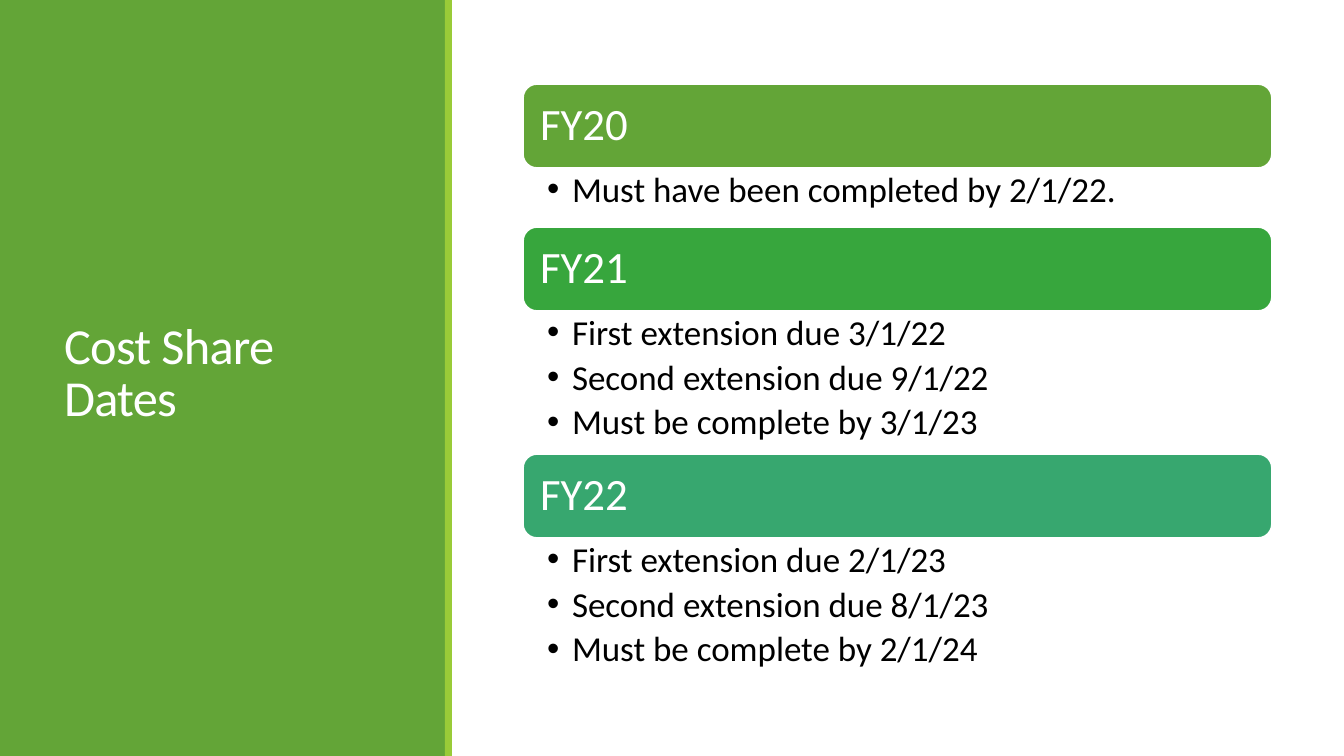
"""Build the Cost Share Dates slide."""
from lxml import etree
from pptx import Presentation, util as u
from pptx.dml import color
from pptx.enum import shapes, text
from pptx.oxml import ns

TITLE = "Cost Share Dates"
YEARS = [
    ("FY20", "green", ["Must have been completed by 2/1/22."]),
    ("FY21", "leaf", ["First extension due 3/1/22", "Second extension due 9/1/22",
                      "Must be complete by 3/1/23"]),
    ("FY22", "teal", ["First extension due 2/1/23", "Second extension due 8/1/23",
                      "Must be complete by 2/1/24"]),
]
COLORS = {"green": "63A537", "lime": "99CB38", "leaf": "37A63D",
          "teal": "37A76F", "white": "FFFFFF", "black": "000000"}
FONT = "Calibri"
PAGE_W, PAGE_H = 1344, 756
LEFT, TOP, WIDTH, BAR_H = 523, 84, 749, 84
LINE_H, LIST_PAD, INDENT = 42, 17, 25


def px(value):
    return u.Emu(round(value * 914400 / 100.8))


def rgb(name):
    return color.RGBColor.from_string(COLORS[name])


def place(box, *bounds):
    box.left, box.top, box.width, box.height = map(px, bounds)


def add_block(page, kind, bounds, fill):
    block = page.shapes.add_shape(kind, *map(px, bounds))
    block.shadow.inherit = False
    block.fill.solid()
    block.fill.fore_color.rgb = rgb(fill)
    block.line.fill.background()
    return block


def set_frame(box, insets, anchor):
    frame = box.text_frame
    frame.word_wrap = True
    frame.auto_size = text.MSO_AUTO_SIZE.NONE
    frame.vertical_anchor = anchor
    (frame.margin_left, frame.margin_top,
     frame.margin_right, frame.margin_bottom) = map(px, insets)
    return frame


def style(para, size, ink, spacing=0.9, after=0):
    para.alignment = text.PP_ALIGN.LEFT
    para.line_spacing = spacing
    para.space_before, para.space_after = u.Pt(0), u.Pt(after)
    for span in para.runs:
        span.font.name, span.font.size, span.font.bold = FONT, u.Pt(size), False
        span.font.color.rgb = rgb(ink)


def add_bullet(para):
    props = para._p.get_or_add_pPr()
    props.set("marL", str(px(INDENT)))
    props.set("indent", str(-px(INDENT)))
    etree.SubElement(props, ns.qn("a:buChar")).set("char", "•")


def add_title(page):
    title = page.shapes.title
    place(title, 54, 57, 340, 636)
    frame = set_frame(title, (10, 5, 10, 5), text.MSO_ANCHOR.MIDDLE)
    frame.text = TITLE
    style(frame.paragraphs[0], 36, "white", 0.85)
    for span in frame.paragraphs[0].runs:
        span.font._element.set("spc", "-50")
    for bounds, fill in [((0, 0, 446, PAGE_H), "green"), ((445, 0, 7, PAGE_H), "lime")]:
        panel = add_block(page, shapes.MSO_SHAPE.RECTANGLE, bounds, fill)
        title.element.addprevious(panel.element)


def add_year(page, body, top, year, fill, dates):
    bar = add_block(page, shapes.MSO_SHAPE.ROUNDED_RECTANGLE, (LEFT, top, WIDTH, BAR_H), fill)
    bar.line.color.rgb = rgb("white")
    bar.line.width = u.Pt(1.25)
    heading = set_frame(bar, (13, 13, 13, 13), text.MSO_ANCHOR.MIDDLE)
    heading.text = year
    style(heading.paragraphs[0], 32, "white")

    height = LIST_PAD + LINE_H * len(dates)
    place(body, LEFT, top + BAR_H, WIDTH, height)
    frame = set_frame(body, (24, 4, 25, 4), text.MSO_ANCHOR.TOP)
    frame.text = "\n".join(dates)
    for para in frame.paragraphs:
        add_bullet(para)
        style(para, 25, "black", after=5)
    return top + BAR_H + height


def main():
    deck = Presentation()
    deck.slide_width, deck.slide_height = px(PAGE_W), px(PAGE_H)
    page = deck.slides.add_slide(deck.slide_layouts.get_by_name("Comparison"))
    add_title(page)
    bodies = list(page.placeholders)[1:]
    top = TOP
    for body, (year, fill, dates) in zip(bodies, YEARS):
        top = add_year(page, body, top, year, fill, dates)
    for spare in bodies[len(YEARS):]:
        spare.element.getparent().remove(spare.element)
    deck.save("out.pptx")


if __name__ == "__main__":
    main()
